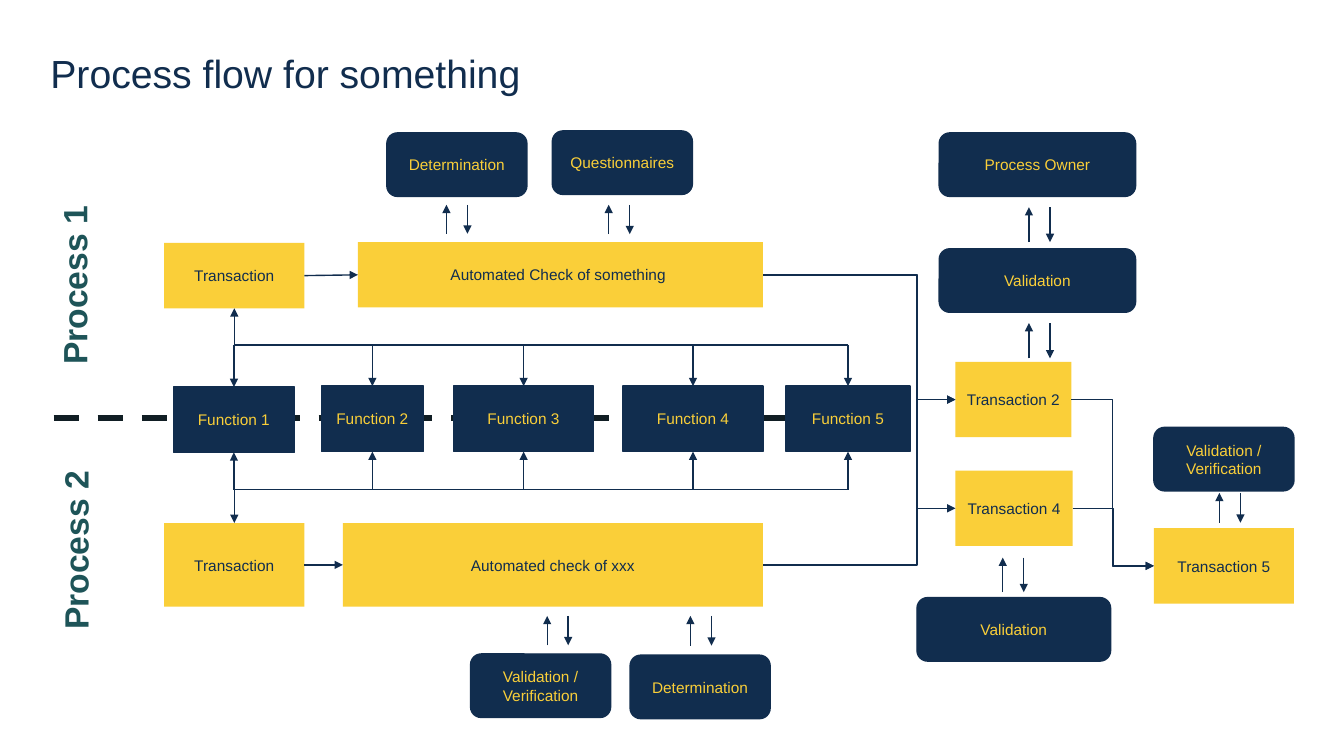
from typing import NamedTuple

from lxml.etree import SubElement
from pptx import Presentation
from pptx.dml.color import RGBColor
from pptx.enum.dml import MSO_LINE
from pptx.enum.shapes import MSO_CONNECTOR as Link, MSO_SHAPE as Preset
from pptx.enum.text import MSO_ANCHOR, MSO_AUTO_SIZE, PP_ALIGN
from pptx.oxml.ns import qn
from pptx.shapes.autoshape import Shape
from pptx.shapes.connector import Connector
from pptx.slide import Slide
from pptx.text.text import _Paragraph as Paragraph
from pptx.util import Cm, Pt

NAVY = RGBColor(0x11, 0x2D, 0x4E)
YELLOW = RGBColor(0xFA, 0xCF, 0x39)
TEAL = RGBColor(0x1E, 0x54, 0x58)
BLACK = RGBColor(0x11, 0x1E, 0x24)
TOP, LEFT, BOTTOM, RIGHT = range(4)
PAIR_GAP = 0.53
UPPER_BUS, LOWER_BUS = 8.69, 12.34


class Style(NamedTuple):
    preset: Preset
    fill: RGBColor
    ink: RGBColor
    outlined: bool


class Box(NamedTuple):
    key: str
    text: str
    x: float
    y: float
    w: float
    h: float
    style: Style


class ArrowPair(NamedTuple):
    x: float
    top: float
    bottom: float


class Elbow(NamedTuple):
    start: str
    end: str
    bend: float


class Lane(NamedTuple):
    text: str
    x: float
    y: float


FUNCTION = Style(Preset.RECTANGLE, NAVY, YELLOW, True)
STEP = Style(Preset.RECTANGLE, YELLOW, NAVY, False)
SUPPORT = Style(Preset.ROUNDED_RECTANGLE, NAVY, YELLOW, True)

BOXES = [
    Box("f1", "Function 1", 4.37, 9.75, 3.05, 1.65, FUNCTION),
    Box("f2", "Function 2", 8.1, 9.73, 2.57, 1.65, FUNCTION),
    Box("f3", "Function 3", 11.43, 9.73, 3.53, 1.65, FUNCTION),
    Box("f4", "Function 4", 15.7, 9.73, 3.53, 1.65, FUNCTION),
    Box("f5", "Function 5", 19.81, 9.73, 3.12, 1.65, FUNCTION),
    Box("start1", "Transaction", 4.14, 6.12, 3.53, 1.65, STEP),
    Box("start2", "Transaction", 4.14, 13.18, 3.53, 2.11, STEP),
    Box("check1", "Automated Check of something ", 9.02, 6.1, 10.21, 1.65, STEP),
    Box("check2", "Automated check of xxx", 8.64, 13.18, 10.59, 2.11, STEP),
    Box("t2", "Transaction 2", 24.08, 9.12, 2.92, 1.9, STEP),
    Box("t4", "Transaction 4", 24.08, 11.86, 2.95, 1.9, STEP),
    Box("t5", "Transaction 5", 29.08, 13.31, 3.53, 1.9, STEP),
    Box("determine1", "Determination", 9.75, 3.35, 3.53, 1.6, SUPPORT),
    Box("questions", "Questionnaires", 13.92, 3.3, 3.53, 1.6, SUPPORT),
    Box("verify2", "Validation / Verification", 11.86, 16.48, 3.53, 1.6, SUPPORT),
    Box("determine2", "Determination", 15.88, 16.51, 3.53, 1.6, SUPPORT),
    Box("owner", "Process Owner", 23.67, 3.35, 4.95, 1.6, SUPPORT),
    Box("validate1", "Validation", 23.67, 6.27, 4.95, 1.6, SUPPORT),
    Box("validate2", "Validation", 23.11, 15.06, 4.88, 1.6, SUPPORT),
    Box("verify5", "Validation / Verification", 29.08, 10.77, 3.53, 1.6, SUPPORT),
]
ARROW_PAIRS = [
    ArrowPair(11.25, 5.16, 5.89),
    ArrowPair(15.34, 5.16, 5.9),
    ArrowPair(13.79, 15.52, 16.26),
    ArrowPair(17.4, 15.52, 16.27),
    ArrowPair(25.93, 5.22, 6.1),
    ArrowPair(25.93, 8.14, 9.03),
    ArrowPair(25.27, 14.05, 14.92),
    ArrowPair(30.73, 12.42, 13.17),
]
ELBOWS = [
    Elbow("check1", "t2", 0.8),
    Elbow("check1", "t4", 0.8),
    Elbow("check2", "t2", 0.8),
    Elbow("t2", "t5", 0.5),
    Elbow("t4", "t5", 0.5),
]
LANES = [Lane("Process 1", -0.41, 6.53), Lane("Process 2", -0.38, 13.21)]


def set_font(p: Paragraph, size: float, color: RGBColor, bold: bool = False) -> None:
    p.font.name, p.font.size, p.font.bold = "Arial", Pt(size), bold
    p.font.color.rgb = color


def add_line(s: Slide, x1: float, y1: float, x2: float, y2: float, arrow: bool = True,
             kind: Link = Link.STRAIGHT) -> Connector:
    line = s.shapes.add_connector(kind, Cm(x1), Cm(y1), Cm(x2), Cm(y2))
    line.line.color.rgb, line.line.width = NAVY, Pt(1)
    if arrow:
        SubElement(line.line._get_or_add_ln(), qn("a:tailEnd"), type="triangle")
    SubElement(line._element.spPr, qn("a:effectLst"))
    return line


def add_elbow(s: Slide, start: Shape, end: Shape, bend: float) -> None:
    """Join two boxes, turning at the given share of the width."""
    line = add_line(s, 0, 0, 1, 1, kind=Link.ELBOW)
    line.begin_connect(start, RIGHT)
    line.end_connect(end, LEFT)
    guides = line._element.spPr.find(qn("a:prstGeom")).get_or_add_avLst()
    SubElement(guides, qn("a:gd"), name="adj1", fmla=f"val {round(bend * 100000)}")


def add_bus_arrow(s: Slide, y: float, target: Shape, side: int) -> None:
    """Run an arrow straight from a bus line to a box side."""
    x = (target.left + target.width / 2) / Cm(1)
    add_line(s, x, y, x, y + 1).end_connect(target, side)


def add_box(s: Slide, box: Box) -> Shape:
    style = box.style
    sp = s.shapes.add_shape(style.preset, Cm(box.x), Cm(box.y), Cm(box.w), Cm(box.h))
    sp.shadow.inherit = False
    sp.fill.solid()
    sp.fill.fore_color.rgb = style.fill
    if style.outlined:
        sp.line.color.rgb, sp.line.width = NAVY, Pt(1)
    else:
        sp.line.fill.background()
    tf = sp.text_frame
    tf.vertical_anchor = MSO_ANCHOR.MIDDLE
    p = tf.paragraphs[0]
    p.text, p.alignment = box.text, PP_ALIGN.CENTER
    set_font(p, 11, style.ink)
    return sp


def add_lane(s: Slide, lane: Lane) -> None:
    sp = s.shapes.add_textbox(Cm(lane.x), Cm(lane.y), Cm(4.55), Cm(1.27))
    sp.rotation = 270
    tf = sp.text_frame
    tf.word_wrap, tf.auto_size = False, MSO_AUTO_SIZE.SHAPE_TO_FIT_TEXT
    tf.text = lane.text
    set_font(tf.paragraphs[0], 24, TEAL, bold=True)


def format_title(s: Slide, text: str) -> None:
    sp = s.shapes.title
    sp.left, sp.top, sp.width, sp.height = Cm(1.27), Cm(0.38), Cm(31.32), Cm(3.07)
    tf = sp.text_frame
    tf.margin_left = tf.margin_top = tf.margin_right = tf.margin_bottom = 0
    tf.vertical_anchor, tf.auto_size = MSO_ANCHOR.MIDDLE, MSO_AUTO_SIZE.NONE
    p = tf.paragraphs[0]
    p.text, p.alignment, p.line_spacing = text, PP_ALIGN.LEFT, 0.9
    set_font(p, 28, NAVY)


def main() -> None:
    prs = Presentation()
    prs.slide_width, prs.slide_height = Cm(33.87), Cm(19.05)
    s = prs.slides.add_slide(prs.slide_layouts[5])
    format_title(s, "Process flow for something")

    divider = add_line(s, 1.35, 10.54, 20.22, 10.54, arrow=False).line
    divider.color.rgb, divider.width, divider.dash_style = BLACK, Pt(4.5), MSO_LINE.DASH
    for lane in LANES:
        add_lane(s, lane)

    shapes = {box.key: add_box(s, box) for box in BOXES}
    functions = [shapes[box.key] for box in BOXES if box.style is FUNCTION]
    bus_ends = [(f.left + f.width / 2) / Cm(1) for f in (functions[0], functions[-1])]
    for bus, side, start, start_side in ((UPPER_BUS, TOP, "start1", BOTTOM),
                                         (LOWER_BUS, BOTTOM, "start2", TOP)):
        add_line(s, bus_ends[0], bus, bus_ends[1], bus, arrow=False)
        for function in functions:
            add_bus_arrow(s, bus, function, side)
        add_bus_arrow(s, bus, shapes[start], start_side)

    for start, check in (("start1", "check1"), ("start2", "check2")):
        line = add_line(s, 0, 0, 1, 1)
        line.begin_connect(shapes[start], RIGHT)
        line.end_connect(shapes[check], LEFT)
    for elbow in ELBOWS:
        add_elbow(s, shapes[elbow.start], shapes[elbow.end], elbow.bend)
    for x, top, bottom in ARROW_PAIRS:
        add_line(s, x, bottom, x, top)
        add_line(s, x + PAIR_GAP, top, x + PAIR_GAP, bottom)

    prs.save("out.pptx")


if __name__ == "__main__":
    main()
